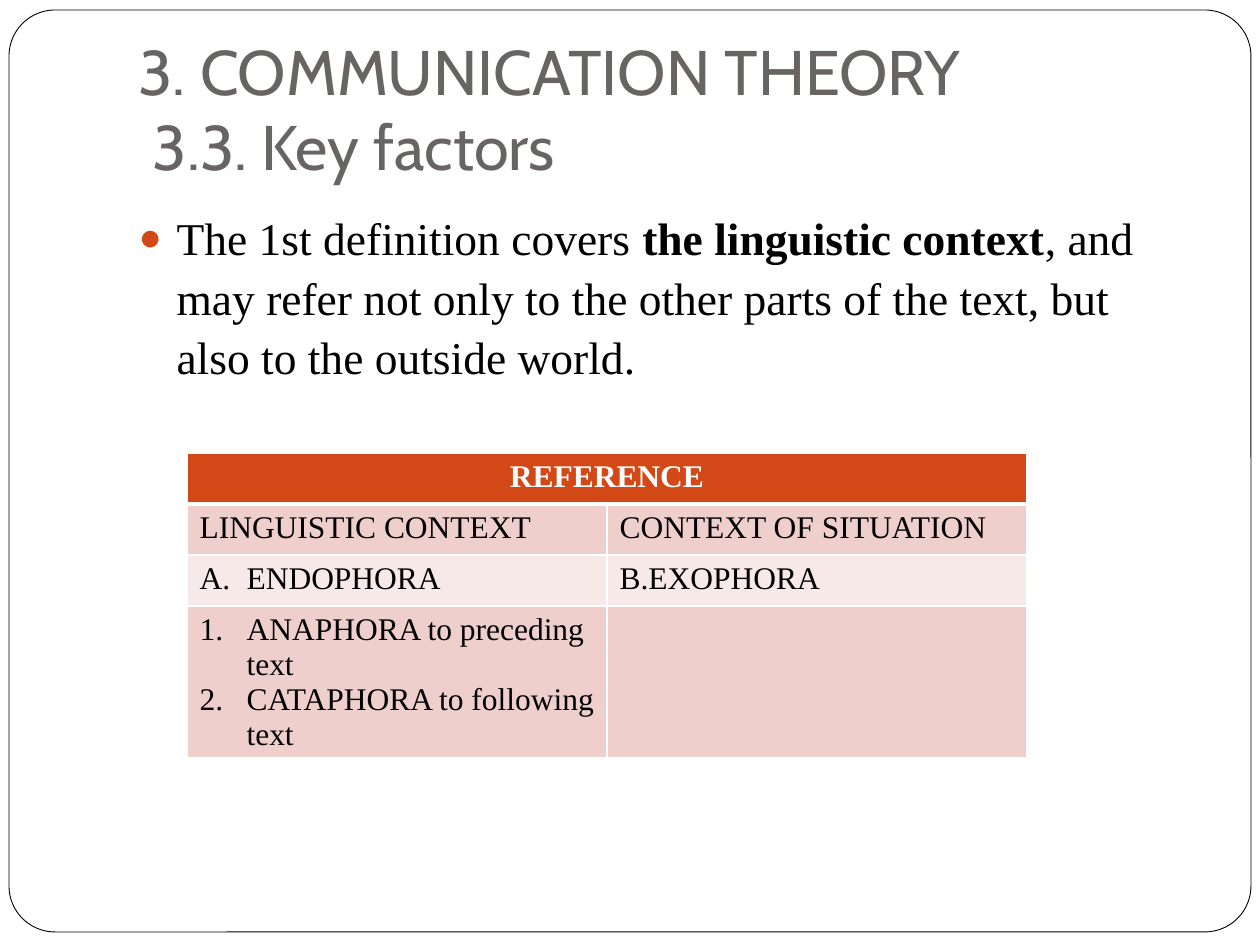
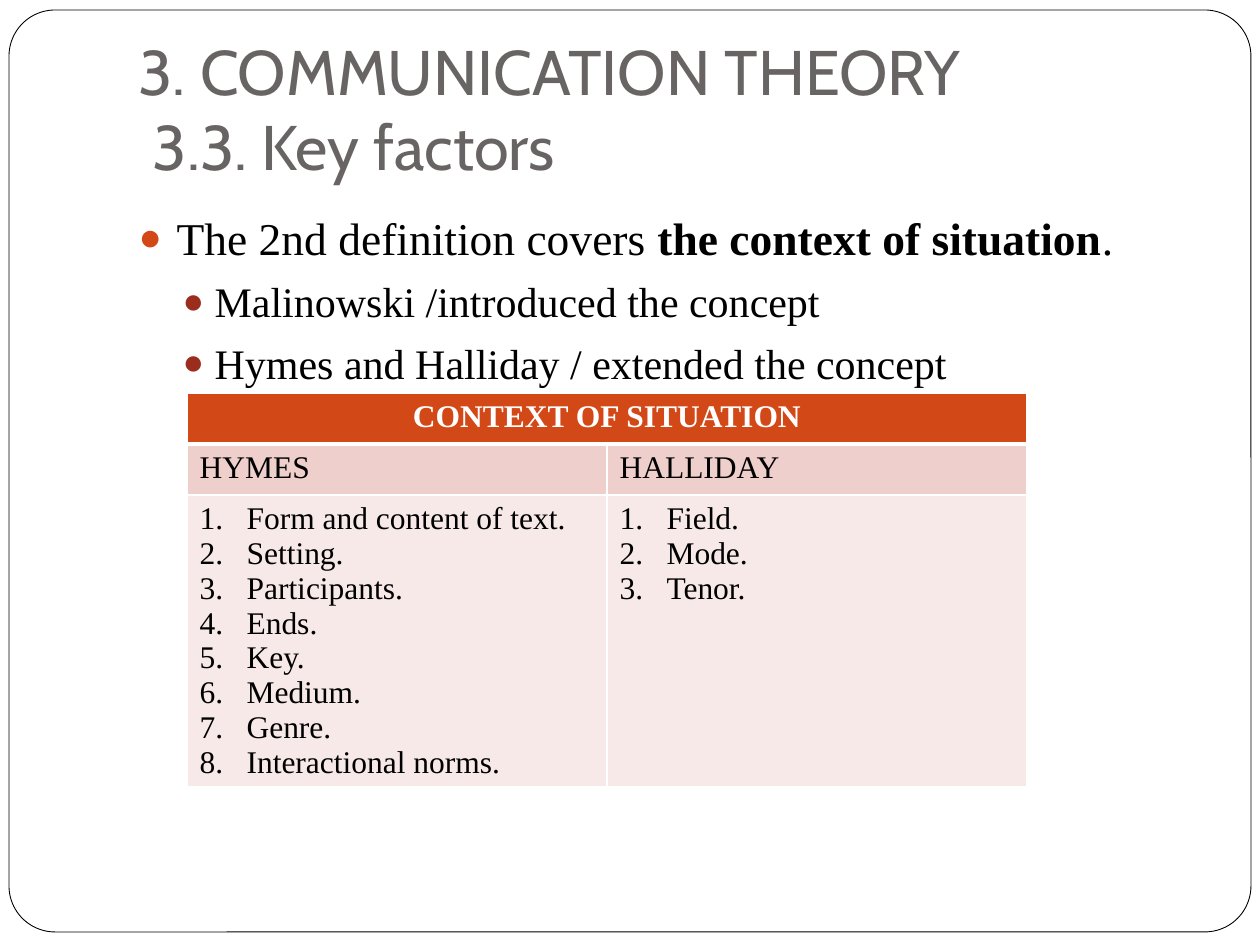
import dataclasses

import lxml.etree
import pptx
import pptx.dml.color
import pptx.enum.shapes
import pptx.enum.text
import pptx.oxml.ns
import pptx.presentation
import pptx.slide
import pptx.table
import pptx.text.text
import pptx.util

PX_PER_INCH = 126
TITLE_FONT = "Cabin"
TEXT_FONT = "Times New Roman"
BLACK = "000000"
WHITE = "FFFFFF"
GREY = "696464"
ORANGE = "D34817"
BRICK = "9B2D1F"
BANDS = ("EFCFCC", "F7E9E8")
TITLE_LINES = ("3. COMMUNICATION THEORY", " 3.3. Key factors")
COLUMN_WIDTH = 420
ROW_HEIGHT = 51
NUMBER_INDENT = 47


@dataclasses.dataclass(frozen=True)
class Box:
    left: int
    top: int
    width: int
    height: int


@dataclasses.dataclass(frozen=True)
class Level:
    size: int
    indent: int
    hanging: int
    space_before: float
    bullet_color: str


@dataclasses.dataclass(frozen=True)
class Point:
    level: int
    before: str
    bold: str = ""
    after: str = ""


@dataclasses.dataclass(frozen=True)
class Cell:
    lines: tuple[str, ...] = ()
    numbering: str = ""


@dataclasses.dataclass(frozen=True)
class Grid:
    top: int
    last_row_height: int
    heading: str
    rows: tuple[tuple[Cell, Cell], ...]


@dataclasses.dataclass(frozen=True)
class Page:
    points: tuple[Point, ...]
    grid: Grid


FRAME_BOX = Box(9, 10, 1242, 922)
TITLE_BOX = Box(126, 38, 1071, 158)
BODY_BOX = Box(126, 199, 1071, 630)
TABLE_LEFT = 187
LEVELS = (Level(26, 38, 38, 5.8, ORANGE), Level(24, 76, 32, 3.7, BRICK))

PAGES = (
    Page(
        (
            Point(
                0,
                "The 1st definition covers ",
                "the linguistic context",
                ", and may refer not only to the other parts of the text, "
                "but also to the outside world.",
            ),
        ),
        Grid(
            453,
            151,
            "REFERENCE",
            (
                (Cell(("LINGUISTIC CONTEXT",)), Cell(("CONTEXT OF SITUATION",))),
                (Cell(("ENDOPHORA",), "alphaUcPeriod"), Cell(("B.EXOPHORA",))),
                (
                    Cell(
                        ("ANAPHORA to preceding text", "CATAPHORA to following text"),
                        "arabicPeriod",
                    ),
                    Cell(),
                ),
            ),
        ),
    ),
    Page(
        (
            Point(0, "The 2nd definition covers ", "the context of situation", "."),
            Point(1, "Malinowski /introduced the concept"),
            Point(1, "Hymes and Halliday / extended the concept"),
        ),
        Grid(
            393,
            290,
            "CONTEXT OF SITUATION",
            (
                (Cell(("HYMES",)), Cell(("HALLIDAY",))),
                (
                    Cell(
                        (
                            "Form and content of text.",
                            "Setting.",
                            "Participants.",
                            "Ends.",
                            "Key.",
                            "Medium.",
                            "Genre.",
                            "Interactional norms.",
                        ),
                        "arabicPeriod",
                    ),
                    Cell(("Field.", "Mode.", "Tenor."), "arabicPeriod"),
                ),
            ),
        ),
    ),
)


def px(length: int) -> pptx.util.Emu:
    return pptx.util.Emu(round(length * 914400 / PX_PER_INCH))


def rgb(color: str) -> pptx.dml.color.RGBColor:
    return pptx.dml.color.RGBColor.from_string(color)


def add_element(parent, tag: str, **attributes: str):
    element = lxml.etree.SubElement(parent, pptx.oxml.ns.qn(tag))
    for name, value in attributes.items():
        element.set(name, value)
    return element


def place(shape, box: Box) -> None:
    shape.left, shape.top = px(box.left), px(box.top)
    shape.width, shape.height = px(box.width), px(box.height)


def add_run(
    paragraph: pptx.text.text._Paragraph,
    text: str,
    size: int,
    color: str = BLACK,
    bold: bool = False,
    font_name: str = TEXT_FONT,
) -> None:
    run = paragraph.add_run()
    run.text = text
    run.font.name = font_name
    run.font.size = pptx.util.Pt(size)
    run.font.bold = bold
    run.font.color.rgb = rgb(color)


def set_indent(paragraph: pptx.text.text._Paragraph, indent: int, hanging: int):
    properties = paragraph._p.get_or_add_pPr()
    properties.set("marL", str(px(indent)))
    properties.set("indent", str(-px(hanging)))
    return properties


def paragraph_at(
    frame: pptx.text.text.TextFrame, index: int
) -> pptx.text.text._Paragraph:
    return frame.add_paragraph() if index else frame.paragraphs[0]


def draw_frame(slide: pptx.slide.Slide) -> None:
    shape = slide.shapes.add_shape(
        pptx.enum.shapes.MSO_SHAPE.ROUNDED_RECTANGLE, 0, 0, 0, 0
    )
    place(shape, FRAME_BOX)
    shape.adjustments[0] = 0.05
    shape.shadow.inherit = False
    shape.fill.solid()
    shape.fill.fore_color.rgb = rgb(WHITE)
    shape.line.color.rgb = rgb(BLACK)
    shape.line.width = pptx.util.Pt(0.5)
    slide.shapes.title.element.addprevious(shape.element)


def draw_title(slide: pptx.slide.Slide) -> None:
    place(slide.shapes.title, TITLE_BOX)
    frame = slide.shapes.title.text_frame
    frame.auto_size = pptx.enum.text.MSO_AUTO_SIZE.NONE
    frame.vertical_anchor = pptx.enum.text.MSO_ANCHOR.BOTTOM
    frame.margin_bottom = pptx.util.Inches(0.1)
    paragraph = frame.paragraphs[0]
    paragraph.alignment = pptx.enum.text.PP_ALIGN.LEFT
    for index, line in enumerate(TITLE_LINES):
        if index:
            paragraph.add_line_break()
        add_run(paragraph, line, 36, GREY, font_name=TITLE_FONT)


def draw_points(slide: pptx.slide.Slide, points: tuple[Point, ...]) -> None:
    body = slide.placeholders[1]
    place(body, BODY_BOX)
    body.text_frame.auto_size = pptx.enum.text.MSO_AUTO_SIZE.NONE
    for index, point in enumerate(points):
        level = LEVELS[point.level]
        paragraph = paragraph_at(body.text_frame, index)
        paragraph.level = point.level
        paragraph.line_spacing = 1.09
        paragraph.space_before = pptx.util.Pt(level.space_before)
        properties = set_indent(paragraph, level.indent, level.hanging)
        bullet_color = add_element(properties, "a:buClr")
        add_element(bullet_color, "a:srgbClr", val=level.bullet_color)
        add_element(properties, "a:buSzPct", val="85000")
        add_element(properties, "a:buFont", typeface="Arial")
        add_element(properties, "a:buChar", char="●")
        for text, bold in (
            (point.before, False),
            (point.bold, True),
            (point.after, False),
        ):
            if text:
                add_run(paragraph, text, level.size, bold=bold)


def style_cell(table_cell: pptx.table._Cell, row: int) -> None:
    properties = table_cell._tc.get_or_add_tcPr()
    widths = {"L": 1, "R": 1, "T": 3 if row == 1 else 1, "B": 1 if row else 3}
    for side, width in widths.items():
        border = add_element(properties, f"a:ln{side}", w=str(pptx.util.Pt(width)))
        border_fill = add_element(border, "a:solidFill")
        add_element(border_fill, "a:srgbClr", val=WHITE)
    table_cell.fill.solid()
    table_cell.fill.fore_color.rgb = rgb(BANDS[(row - 1) % 2] if row else ORANGE)


def write_cell(table_cell: pptx.table._Cell, cell: Cell) -> None:
    for index, line in enumerate(cell.lines):
        paragraph = paragraph_at(table_cell.text_frame, index)
        if cell.numbering:
            properties = set_indent(paragraph, NUMBER_INDENT, NUMBER_INDENT)
            add_element(properties, "a:buAutoNum", type=cell.numbering)
        add_run(paragraph, line, 18)


def draw_grid(slide: pptx.slide.Slide, grid: Grid) -> None:
    heights = [ROW_HEIGHT] * len(grid.rows) + [grid.last_row_height]
    table = slide.shapes.add_table(
        len(heights),
        2,
        px(TABLE_LEFT),
        px(grid.top),
        px(2 * COLUMN_WIDTH),
        px(sum(heights)),
    ).table
    for column in table.columns:
        column.width = px(COLUMN_WIDTH)
    for row, height in enumerate(heights):
        table.rows[row].height = px(height)
        for table_cell in table.rows[row].cells:
            style_cell(table_cell, row)
    heading = table.cell(0, 0)
    heading.merge(table.cell(0, 1))
    paragraph = heading.text_frame.paragraphs[0]
    paragraph.alignment = pptx.enum.text.PP_ALIGN.CENTER
    add_run(paragraph, grid.heading, 18, WHITE, bold=True)
    for row, cells in enumerate(grid.rows, start=1):
        for column, cell in enumerate(cells):
            write_cell(table.cell(row, column), cell)


def draw_page(presentation: pptx.presentation.Presentation, page: Page) -> None:
    slide = presentation.slides.add_slide(presentation.slide_layouts[1])
    draw_frame(slide)
    draw_title(slide)
    draw_points(slide, page.points)
    draw_grid(slide, page.grid)


def main() -> None:
    presentation = pptx.Presentation()
    presentation.slide_width, presentation.slide_height = px(1260), px(945)
    for page in PAGES:
        draw_page(presentation, page)
    presentation.save("out.pptx")


if __name__ == "__main__":
    main()
